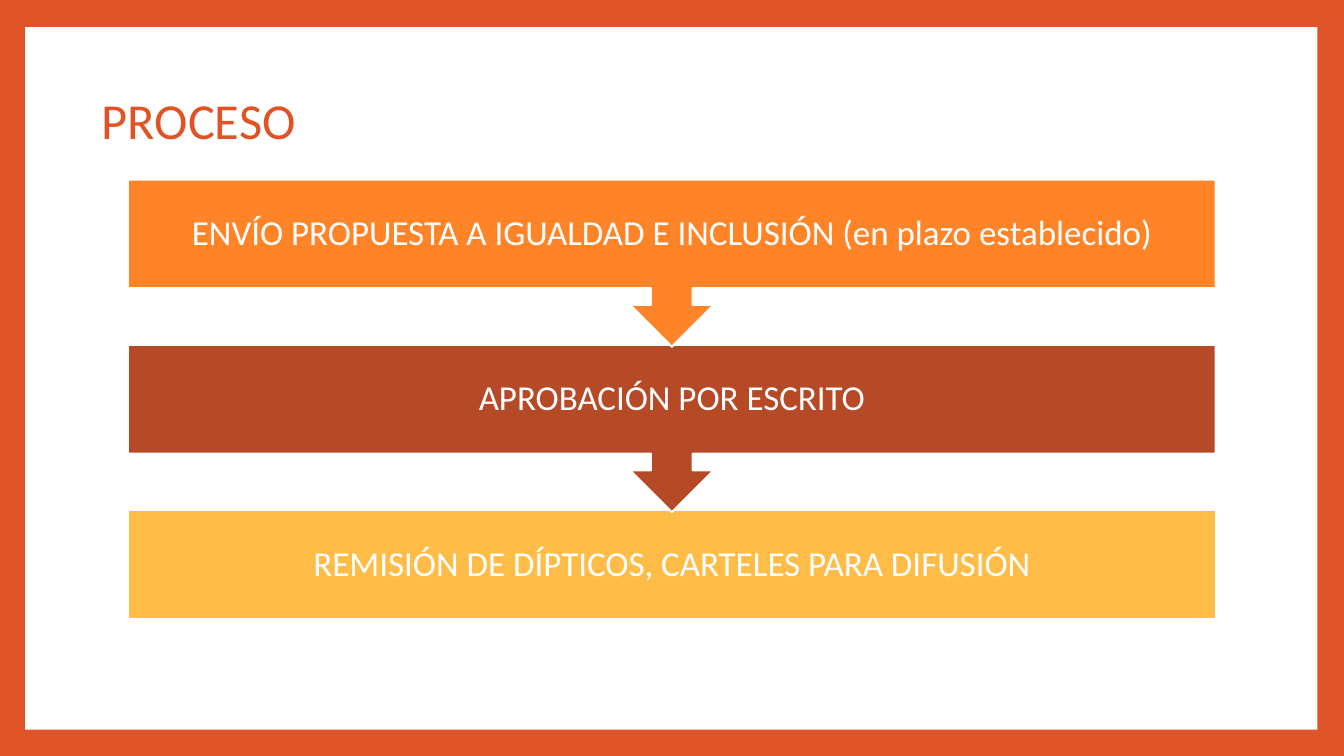
from pptx import Presentation
from pptx.dml.color import RGBColor
from pptx.enum.shapes import MSO_SHAPE
from pptx.enum.text import MSO_ANCHOR, PP_ALIGN
from pptx.util import Pt

COLORS = {
    "frame": "DF5327",
    "white": "FFFFFF",
    "orange": "FF8427",
    "rust": "B64926",
    "amber": "FFBD47",
}
STEPS = [
    ("ENVÍO PROPUESTA A IGUALDAD E INCLUSIÓN (en plazo establecido)", "orange"),
    ("APROBACIÓN POR ESCRITO", "rust"),
    ("REMISIÓN DE DÍPTICOS, CARTELES PARA DIFUSIÓN", "amber"),
]
LEFT, TOP, WIDTH = 91.4, 128.2, 777
PITCH = 118.2
BOX, CALLOUT = 77.8, 119.5


def color(name):
    return RGBColor.from_string(COLORS[name])


def style(frame, text, size, name, align):
    frame.word_wrap = True
    frame.text = text
    line = frame.paragraphs[0]
    line.alignment = align
    font = line.runs[0].font
    font.name, font.size = "Calibri", Pt(size)
    font.color.rgb = color(name)


def add_block(slide, kind, left, top, width, height, fill):
    shape = slide.shapes.add_shape(kind, Pt(left), Pt(top), Pt(width), Pt(height))
    shape.shadow.inherit = False
    shape.fill.solid()
    shape.fill.fore_color.rgb = color(fill)
    shape.line.fill.background()
    return shape


def add_panel(slide):
    panel = add_block(slide, MSO_SHAPE.RECTANGLE, 18, 19.4, 923, 501.8, "white")
    # Behind the title placeholder
    slide.shapes[0].element.addprevious(panel.element)


def add_title(slide, text):
    title = slide.shapes.title
    title.left, title.top = Pt(65.5), Pt(59.8)
    title.width, title.height = Pt(676.8), Pt(103.7)
    title.text_frame.vertical_anchor = MSO_ANCHOR.TOP
    style(title.text_frame, text, 36, "frame", PP_ALIGN.LEFT)


def add_step(slide, index, text, fill):
    """Add one step; all but the last point down to the next one."""
    last = index == len(STEPS) - 1
    kind = MSO_SHAPE.RECTANGLE if last else MSO_SHAPE.DOWN_ARROW_CALLOUT
    height = BOX if last else CALLOUT
    step = add_block(slide, kind, LEFT, TOP + index * PITCH, WIDTH, height, fill)
    step.line.color.rgb = color("white")
    step.line.width = Pt(1.5)
    frame = step.text_frame
    frame.margin_left = frame.margin_right = Pt(13.7)
    frame.margin_top = frame.margin_bottom = Pt(13.7)
    frame.vertical_anchor = MSO_ANCHOR.MIDDLE
    style(frame, text, 25, "white", PP_ALIGN.CENTER)
    frame.paragraphs[0].line_spacing = 0.9


def main():
    deck = Presentation()
    deck.slide_width, deck.slide_height = Pt(960), Pt(540)
    slide = deck.slides.add_slide(deck.slide_layouts[5])
    slide.background.fill.solid()
    slide.background.fill.fore_color.rgb = color("frame")
    add_panel(slide)
    add_title(slide, "PROCESO")
    # Bottom step first, so that each arrow lies over the next box
    for index, (text, fill) in reversed(list(enumerate(STEPS))):
        add_step(slide, index, text, fill)
    deck.save("out.pptx")


if __name__ == "__main__":
    main()
